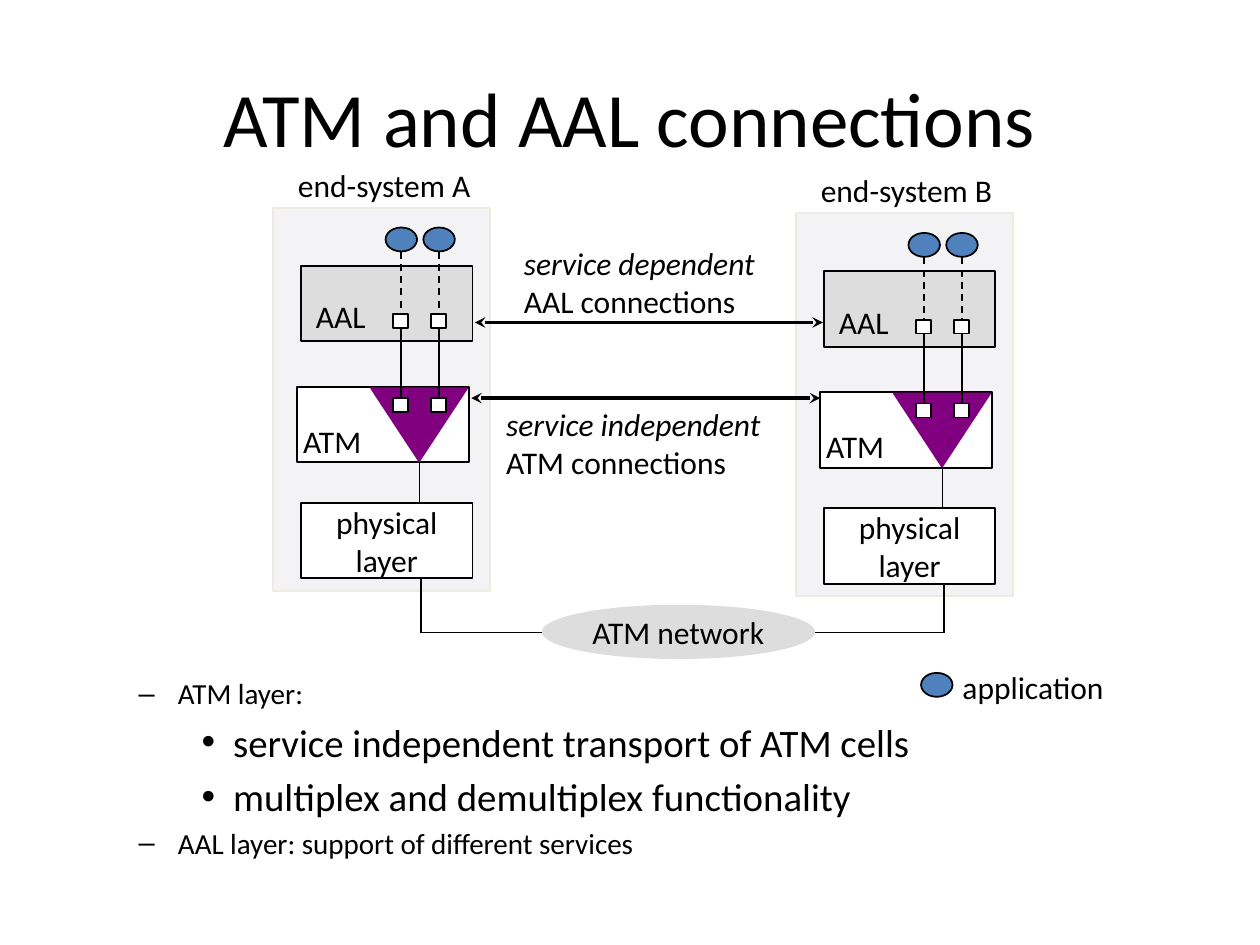
from dataclasses import dataclass

from lxml.etree import SubElement
from pptx import Presentation
from pptx.dml.color import RGBColor
from pptx.enum.dml import MSO_LINE
from pptx.enum.shapes import MSO_CONNECTOR, MSO_SHAPE
from pptx.enum.text import MSO_ANCHOR, MSO_AUTO_SIZE, PP_ALIGN
from pptx.oxml.ns import qn
from pptx.util import Pt

BLACK = RGBColor(0, 0, 0)
WHITE = RGBColor(255, 255, 255)
PANEL_FILL = RGBColor(0xF3, 0xF3, 0xF5)
PANEL_EDGE = RGBColor(0xEE, 0xEC, 0xE1)
GREY = RGBColor(0xDD, 0xDD, 0xDD)
PURPLE = RGBColor(0x80, 0x00, 0x80)
BLUE = RGBColor(0x4F, 0x81, 0xBD)

LAYER_SIZE = (98, 43.2)
PORT_SIZE = (8.6, 8)
APP_SIZE = (18, 13.7)
CHANNEL_GAP = 21.6


@dataclass(frozen=True)
class EndSystem:
    name: str
    left: float
    top: float


@dataclass(frozen=True)
class Connection:
    kind: str
    layer: str
    start: float
    end: float
    y: float
    label_box: tuple[float, float, float, float]


@dataclass(frozen=True)
class Bullet:
    text: str
    level: int
    size: float
    space_before: float


END_SYSTEMS = [
    EndSystem("end-system A", 156.2, 118.8),
    EndSystem("end-system B", 455, 121.9),
]
CONNECTIONS = [
    Connection("service dependent", "AAL connections", 271.4, 470.2, 184.3,
               (292.3, 136.1, 161.3, 50.4)),
    Connection("service independent", "ATM connections", 269.3, 468.7, 227.5,
               (282.2, 228.2, 175.7, 50.4)),
]
BULLETS = [
    Bullet("ATM layer:", 1, 16.6, 0),
    Bullet("service independent transport of ATM cells", 2, 22.2, 4.4),
    Bullet("multiplex and demultiplex functionality", 2, 22.2, 4.4),
    Bullet("AAL layer: support of different services", 1, 16.6, 3.3),
]


def write(frame, text: str, *, size: float = 18, align=None,
          italic: bool = False, level: int = 0, space_before: float = 0) -> None:
    """Add one formatted paragraph, filling the empty first one if there is one."""
    paragraph = frame.paragraphs[0] if not frame.text else frame.add_paragraph()
    paragraph.level = level
    paragraph.alignment = align
    paragraph.space_before = Pt(space_before)
    run = paragraph.add_run()
    run.text = text
    font = run.font
    font.name, font.size, font.italic = "Calibri", Pt(size), italic
    font.color.rgb = BLACK


def place(placeholder, left: float, top: float, width: float, height: float) -> None:
    placeholder.left, placeholder.top = Pt(left), Pt(top)
    placeholder.width, placeholder.height = Pt(width), Pt(height)
    placeholder.text_frame.auto_size = MSO_AUTO_SIZE.NONE


def draw_shape(slide, kind, left: float, top: float, size: tuple[float, float],
               fill: RGBColor, edge: RGBColor | None = BLACK,
               lines: tuple[str, ...] = ()):
    shape = slide.shapes.add_shape(kind, Pt(left), Pt(top), Pt(size[0]), Pt(size[1]))
    shape.shadow.inherit = False
    shape.fill.solid()
    shape.fill.fore_color.rgb = fill
    if edge is None:
        shape.line.fill.background()
    else:
        shape.line.color.rgb = edge
        shape.line.width = Pt(1)
    if lines:
        frame = shape.text_frame
        frame.word_wrap = False
        frame.vertical_anchor = MSO_ANCHOR.MIDDLE
        for line in lines:
            write(frame, line, align=PP_ALIGN.CENTER)
    return shape


def draw_label(slide, left: float, top: float, width: float, height: float = 29):
    frame = slide.shapes.add_textbox(Pt(left), Pt(top), Pt(width), Pt(height)).text_frame
    frame.word_wrap = False
    frame.auto_size = MSO_AUTO_SIZE.SHAPE_TO_FIT_TEXT
    return frame


def draw_line(slide, x1: float, y1: float, x2: float, y2: float, *,
              width: float = 1, dashed: bool = False, arrows: bool = False) -> None:
    connector = slide.shapes.add_connector(
        MSO_CONNECTOR.STRAIGHT, Pt(x1), Pt(y1), Pt(x2), Pt(y2))
    connector.line.color.rgb = BLACK
    connector.line.width = Pt(width)
    if dashed:
        connector.line.dash_style = MSO_LINE.DASH
    properties = connector._element.spPr
    if arrows:
        for end in ("a:headEnd", "a:tailEnd"):
            SubElement(properties.find(qn("a:ln")), qn(end), type="stealth")
    SubElement(properties, qn("a:effectLst"))


def draw_end_system(slide, system: EndSystem) -> None:
    x, y = system.left, system.top
    box = MSO_SHAPE.RECTANGLE
    draw_shape(slide, box, x, y, (123.8, 218.9), PANEL_FILL, PANEL_EDGE)

    # Protocol layers
    draw_shape(slide, box, x + 15.8, y + 168.5, LAYER_SIZE, WHITE,
               lines=("physical", "layer"))
    draw_shape(slide, box, x + 13.7, y + 102.2, LAYER_SIZE, WHITE)
    write(draw_label(slide, x + 10, y + 118.8, 52.6), "ATM")
    multiplexer = draw_shape(slide, MSO_SHAPE.ISOSCELES_TRIANGLE, x + 55.8, y + 103,
                             (55, 41.8), PURPLE, PURPLE)
    multiplexer.rotation = 180
    draw_shape(slide, box, x + 15.8, y + 33.1, LAYER_SIZE, GREY)
    write(draw_label(slide, x + 17.3, y + 47.5, 48.2), "AAL")

    # Applications with their channels through the AAL and ATM ports
    for shift in (0, CHANNEL_GAP):
        for port_top in (108.7, 60.8):
            draw_shape(slide, box, x + 68.4 + shift, y + port_top, PORT_SIZE, WHITE)
        draw_shape(slide, MSO_SHAPE.OVAL, x + 64.1 + shift, y + 11.2, APP_SIZE, BLUE)
        center = x + 73 + shift
        draw_line(slide, center, y + 25.2, center, y + 60.8, dashed=True)
        draw_line(slide, center, y + 68.8, center, y + 108.7)
    draw_line(slide, x + 83.5, y + 145.4, x + 83.5, y + 168.5)

    write(draw_label(slide, x + 7, y - 27.7, 124.6), system.name)


def main() -> None:
    presentation = Presentation()
    presentation.slide_width, presentation.slide_height = Pt(720), Pt(540)
    slide = presentation.slides.add_slide(presentation.slide_layouts[1])

    # Title and list
    title, body = slide.placeholders
    place(title, 36, 21.6, 648, 90)
    write(title.text_frame, "ATM and AAL connections", size=44, align=PP_ALIGN.CENTER)
    place(body, 36, 382.5, 648, 120)
    for bullet in BULLETS:
        write(body.text_frame, bullet.text, size=bullet.size, level=bullet.level,
              space_before=bullet.space_before)

    for system in END_SYSTEMS:
        draw_end_system(slide, system)

    # Network below the two end systems
    cable_y = 361.5
    for system in END_SYSTEMS:
        drop = system.left + 84.3
        draw_line(slide, drop, system.top + 212, drop, cable_y)
    first, last = (system.left + 84.3 for system in END_SYSTEMS)
    draw_line(slide, first, cable_y, last, cable_y)
    draw_shape(slide, MSO_SHAPE.OVAL, 309.6, 345.6, (156.2, 31), GREY, None,
               ("ATM network",))

    # Connections between equal layers
    for link in CONNECTIONS:
        draw_line(slide, link.start, link.y, link.end, link.y, width=2, arrows=True)
        label = draw_label(slide, *link.label_box)
        write(label, link.kind, italic=True)
        write(label, link.layer)

    # Legend
    draw_shape(slide, MSO_SHAPE.OVAL, 526.3, 384.5, APP_SIZE, BLUE)
    write(draw_label(slide, 542.9, 378, 100.8), "application")

    presentation.save("out.pptx")


if __name__ == "__main__":
    main()
